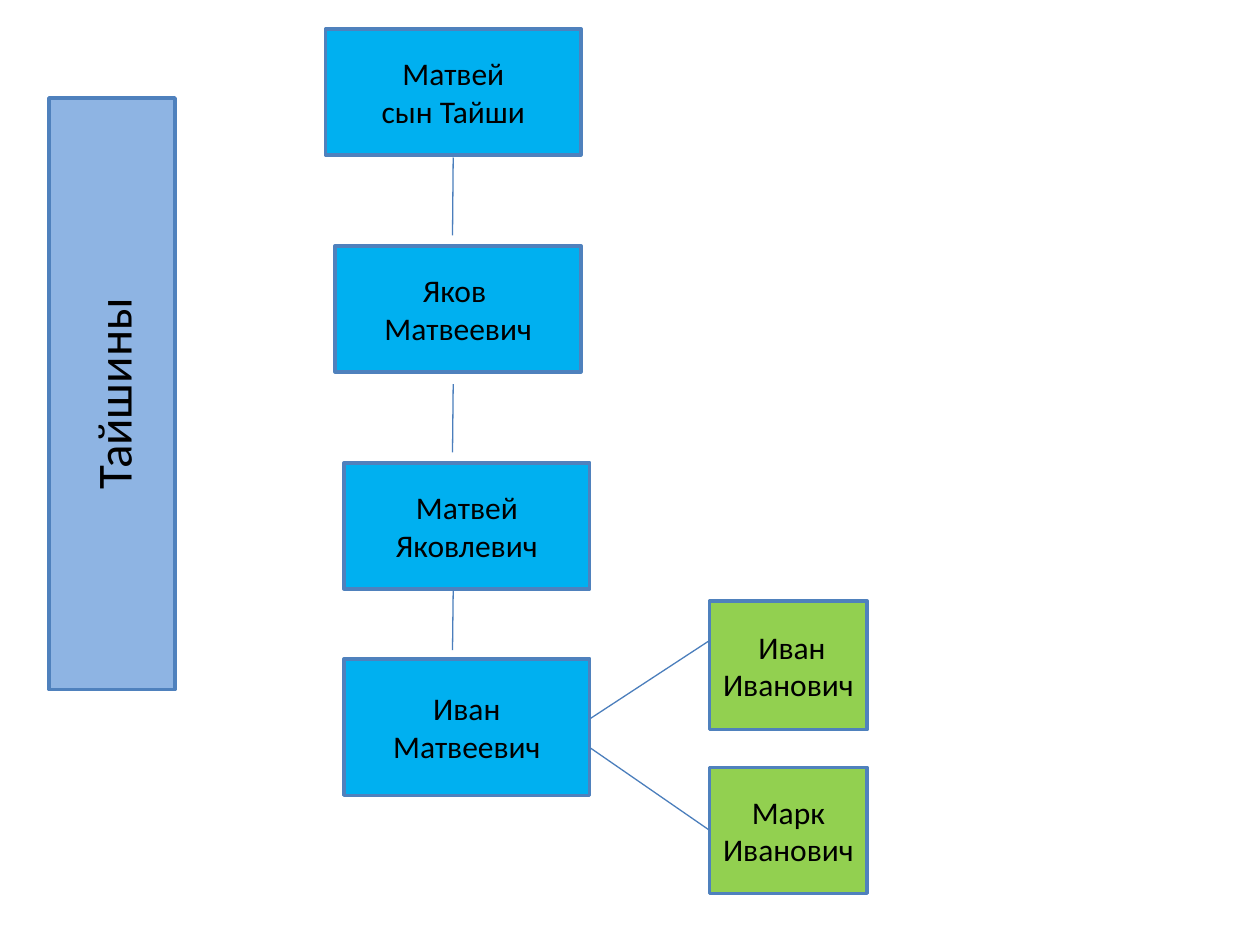
from dataclasses import dataclass

from lxml import etree
from pptx import Presentation
from pptx.dml.color import RGBColor
from pptx.enum.shapes import MSO_CONNECTOR, MSO_SHAPE
from pptx.enum.text import MSO_ANCHOR, PP_ALIGN
from pptx.oxml.ns import qn
from pptx.util import Pt

RECT = MSO_SHAPE.RECTANGLE
LINE = MSO_CONNECTOR.STRAIGHT
MIDDLE = MSO_ANCHOR.MIDDLE
CENTER = PP_ALIGN.CENTER
LEFT_SIDE = 1


@dataclass(frozen=True)
class Theme:
    font: str = "Calibri"
    title: float = 28
    body: float = 18
    ink: RGBColor = RGBColor(0, 0, 0)
    bar: RGBColor = RGBColor(0x8E, 0xB4, 0xE3)
    elder: RGBColor = RGBColor(0x00, 0xB0, 0xF0)
    son: RGBColor = RGBColor(0x92, 0xD0, 0x50)
    edge: RGBColor = RGBColor(0x4F, 0x81, 0xBD)
    link: RGBColor = RGBColor(0x4B, 0x7E, 0xBC)
    border: float = 2
    thin: float = 0.75


THEME = Theme()


def style(shape, text, fill, size):
    shape.fill.solid()
    shape.fill.fore_color.rgb = fill
    shape.line.color.rgb = THEME.edge
    shape.line.width = Pt(THEME.border)
    frame = shape.text_frame
    frame.text = text
    frame.word_wrap = True
    frame.vertical_anchor = MIDDLE
    for para in frame.paragraphs:
        para.alignment = CENTER
        for run in para.runs:
            run.font.name = THEME.font
            run.font.size = Pt(size)
            run.font.color.rgb = THEME.ink


def add_card(slide, box, text, fill):
    card = slide.shapes.add_shape(RECT, *map(Pt, box))
    card.shadow.inherit = False
    style(card, text, fill, THEME.body)
    return card


def add_link(slide, start, end):
    link = slide.shapes.add_connector(LINE, *map(Pt, (*start, *end)))
    link.line.color.rgb = THEME.link
    link.line.width = Pt(THEME.thin)
    etree.SubElement(link.element.spPr, qn("a:effectLst"))
    return link


def add_bar(slide, box, text):
    """Turn the title upright so that it fills the given box."""
    left, top, width, height = box
    bar = slide.shapes.title
    bar.left = Pt(left + (width - height) / 2)
    bar.top = Pt(top + (height - width) / 2)
    bar.width, bar.height = Pt(height), Pt(width)
    bar.rotation = 270
    style(bar, text, THEME.bar, THEME.title)


def add_line(slide, box):
    """Draw the line of descent, one elder below the other."""
    left, top, width, _ = box
    # text, indent, offset from top, height
    elders = [
        ("Матвей\nсын Тайши", 0, 0, 72),
        ("Яков \nМатвеевич", 5.5, 124, 72),
        ("Матвей Яковлевич", 10.5, 248, 72),
        ("Иван Матвеевич", 10.5, 360, 78),
    ]
    for text, indent, drop, height in elders:
        span = width if indent == 0 else width - 5.5
        add_card(slide, (left + indent, top + drop, span, height),
                 text, THEME.elder)
    axis = left + width / 2
    for start, end in ((73.5, 118), (203, 242), (321, 355)):
        add_link(slide, (axis, top + start), (axis - 0.4, top + end))


def add_sons(slide, box):
    """Draw the two sons and the links from their father's right side."""
    left, top, width, _ = box
    father = left - 68
    ivan = (left, top, width, 73.5)
    mark = (left, top + 95, width, 72)
    add_card(slide, ivan, " Иван Иванович", THEME.son)
    card = add_card(slide, mark, "Марк\nИванович", THEME.son)
    add_link(slide, (left, top + 22.5), (father, top + 67))
    link = add_link(slide, (father, top + 84), (left, top + 131))
    link.end_connect(card, LEFT_SIDE)


def main():
    deck = Presentation()
    deck.slide_width, deck.slide_height = Pt(720), Pt(540)
    slide = deck.slides.add_slide(deck.slide_layouts[5])
    add_bar(slide, (28, 56, 72, 338), "Тайшины")
    add_line(slide, (186, 16.5, 146, 438))
    add_sons(slide, (405.5, 343.5, 90, 167))
    deck.save("out.pptx")


if __name__ == "__main__":
    main()
